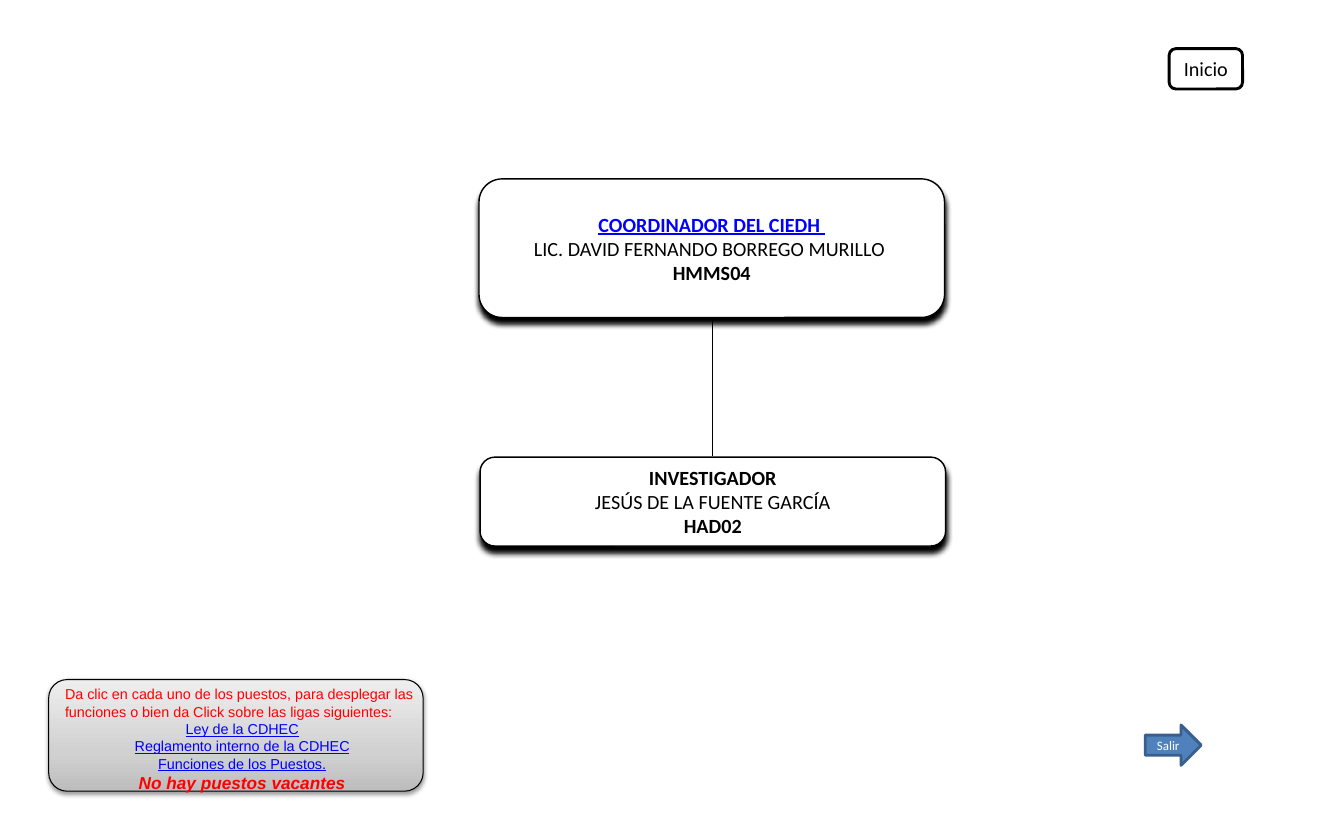
from lxml.etree import SubElement
from pptx import Presentation
from pptx.dml.color import RGBColor
from pptx.enum.shapes import MSO_CONNECTOR, MSO_SHAPE
from pptx.enum.text import MSO_ANCHOR, MSO_AUTO_SIZE, PP_ALIGN
from pptx.oxml.ns import qn
from pptx.util import Emu, Pt

SCALE = 9144
BLACK, WHITE, RED, BLUE = "000000", "FFFFFF", "FF0000", "0000FF"


def px(n):
    return Emu(n * SCALE)


def rgb(value):
    return RGBColor.from_string(value)


def add_color(parent, color, alpha=100):
    clr = SubElement(parent, qn("a:srgbClr"), val=color)
    if alpha < 100:
        SubElement(clr, qn("a:alpha"), val=str(alpha * 1000))


class Chart:
    def __init__(self, width, height):
        self.prs = Presentation()
        self.prs.slide_width, self.prs.slide_height = px(width), px(height)
        self.s = self.prs.slides.add_slide(self.prs.slide_layouts[6])
        self.font = {"name": "Calibri", "size": Pt(14), "bold": False,
                     "italic": False, "underline": False}

    def text(self, sp, lines, frame, **base):
        tf = sp.text_frame
        for key, value in frame.items():
            setattr(tf, key, value)
        for i, (line, fmt) in enumerate(lines):
            p = tf.paragraphs[0] if i == 0 else tf.add_paragraph()
            fmt = {"align": PP_ALIGN.CENTER, "color": BLACK, **self.font, **base, **fmt}
            p.alignment = fmt.pop("align")
            r = p.add_run()
            r.text = line
            r.font.color.rgb = rgb(fmt.pop("color"))
            for key, value in fmt.items():
                setattr(r.font, key, value)

    def shape(self, kind, box, fill, line, width):
        sp = self.s.shapes.add_shape(kind, *map(px, box))
        sp.shadow.inherit = False
        if isinstance(fill, str):
            sp.fill.solid()
            sp.fill.fore_color.rgb = rgb(fill)
        else:
            self.gradient(sp, fill)
        sp.line.color.rgb = rgb(line)
        sp.line.width = Pt(width)
        return sp

    def gradient(self, sp, stops):
        sp.fill.gradient()
        sp.fill.gradient_angle = 90
        gs_lst = sp.element.spPr.find(".//" + qn("a:gsLst"))
        for gs in list(gs_lst):
            gs_lst.remove(gs)
        for pos, color in stops:
            add_color(SubElement(gs_lst, qn("a:gs"), pos=str(pos * 1000)), color)

    def shadow(self, sp, alpha, blur, dist):
        effects = sp.element.spPr.find(qn("a:effectLst"))
        outer = SubElement(effects, qn("a:outerShdw"), blurRad=str(Pt(blur)),
                           dist=str(Pt(dist)), dir="5400000", rotWithShape="0")
        add_color(outer, BLACK, alpha)

    def position(self, box, title, person, code, **title_fmt):
        sp = self.shape(MSO_SHAPE.ROUNDED_RECTANGLE, box, WHITE, BLACK, 1)
        self.shadow(sp, 100, 4, 4)
        frame = {"word_wrap": False, "vertical_anchor": MSO_ANCHOR.MIDDLE,
                 "margin_left": px(17), "margin_right": px(17),
                 "margin_top": px(9), "margin_bottom": px(9)}
        lines = [(title, {"bold": True, **title_fmt}), (person, {}), (code, {"bold": True})]
        self.text(sp, lines, frame)

    def button(self, kind, box, label, fill, line, **fmt):
        sp = self.shape(kind, box, fill, line, 2)
        frame = {"word_wrap": True, "vertical_anchor": MSO_ANCHOR.MIDDLE}
        self.text(sp, [(label, fmt)], frame)

    def panel(self, box, stops):
        sp = self.shape(MSO_SHAPE.ROUNDED_RECTANGLE, box, stops, BLACK, 0.75)
        self.shadow(sp, 38, 3.1, 1.6)

    def note(self, box, lines):
        sp = self.s.shapes.add_textbox(*map(px, box))
        frame = {"word_wrap": True, "auto_size": MSO_AUTO_SIZE.SHAPE_TO_FIT_TEXT}
        self.text(sp, lines, frame, name="Arial", size=Pt(10), color=RED)

    def connector(self, *ends):
        c = self.s.shapes.add_connector(MSO_CONNECTOR.STRAIGHT, *map(px, ends))
        c.line.color.rgb = rgb(BLACK)
        c.line.width = Pt(0.75)
        SubElement(c.element.spPr, qn("a:effectLst"))


def main():
    chart = Chart(1299, 788)
    link = {"color": BLUE, "underline": True}
    chart.position((463, 173, 450, 134), "COORDINADOR DEL CIEDH ",
                   "LIC. DAVID FERNANDO BORREGO MURILLO ", "HMMS04", **link)
    chart.button(MSO_SHAPE.ROUNDED_RECTANGLE, (1130, 47, 71, 39), "Inicio", WHITE, BLACK)
    chart.panel((47, 657, 362, 108), [(0, "BDBDBD"), (35, "D1D1D1"), (100, "EEEEEE")])
    chart.note((53, 658, 362, 114), [
        ("Da clic en cada uno de los puestos, para desplegar las funciones "
         "o bien da Click sobre las ligas siguientes:", {"align": PP_ALIGN.LEFT}),
        ("Ley de la CDHEC", link),
        ("Reglamento interno de la CDHEC", link),
        ("Funciones de los Puestos.", link),
        ("No hay puestos vacantes", {"size": Pt(12), "bold": True, "italic": True}),
    ])
    chart.button(MSO_SHAPE.RIGHT_ARROW, (1107, 701, 54, 39), "Salir", "4F81BD", "3A5F8C",
                 size=Pt(9), color=WHITE)
    chart.connector(689, 307, 689, 441)
    chart.position((464, 442, 450, 86), "INVESTIGADOR", "JESÚS DE LA FUENTE GARCÍA", "HAD02")
    chart.prs.save("out.pptx")


if __name__ == "__main__":
    main()
